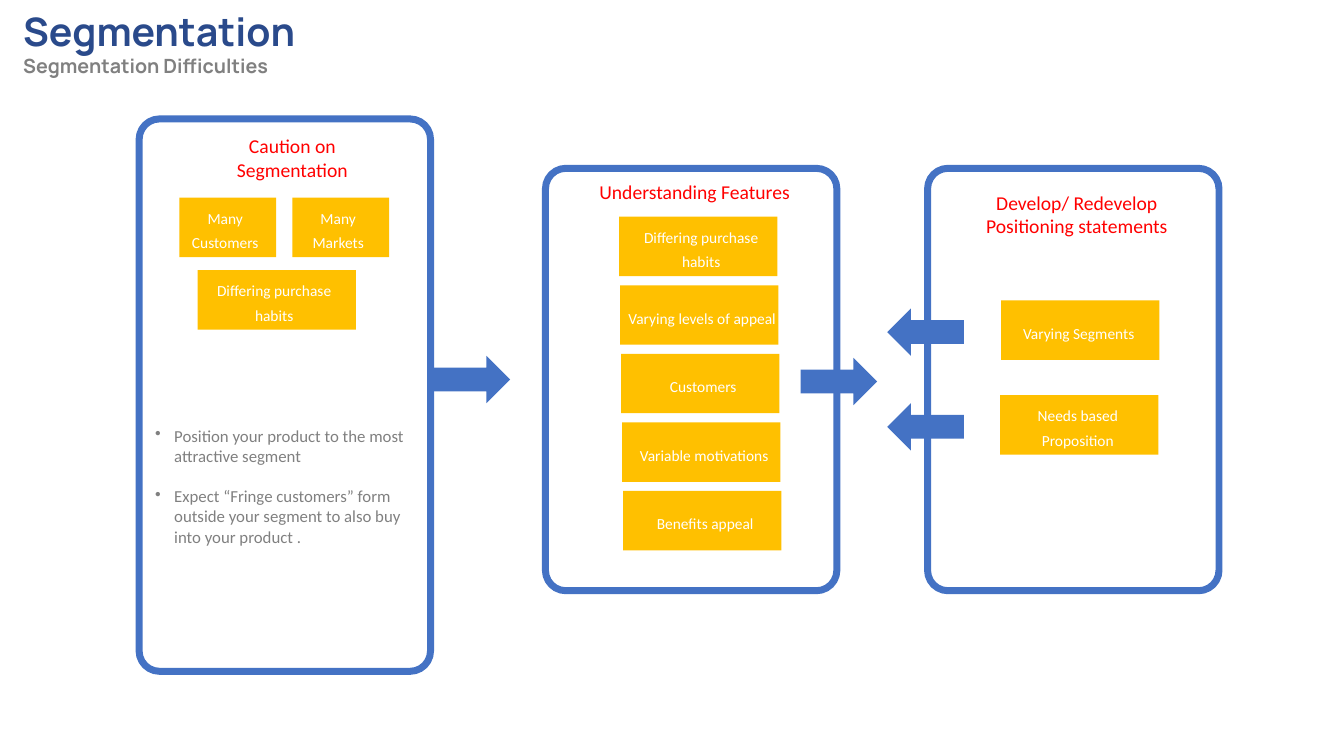
from lxml import etree
from pptx import Presentation
from pptx.dml.color import RGBColor
from pptx.enum.shapes import MSO_SHAPE
from pptx.enum.text import MSO_ANCHOR, MSO_AUTO_SIZE, PP_ALIGN
from pptx.oxml.ns import qn
from pptx.util import Inches, Pt

RECT, ROUND = MSO_SHAPE.RECTANGLE, MSO_SHAPE.ROUNDED_RECTANGLE
RIGHT, LEFT = MSO_SHAPE.RIGHT_ARROW, MSO_SHAPE.LEFT_ARROW
TOP, MIDDLE = MSO_ANCHOR.TOP, MSO_ANCHOR.MIDDLE
ALIGN_LEFT, ALIGN_CENTER = PP_ALIGN.LEFT, PP_ALIGN.CENTER
WHITE = RGBColor(0xFF, 0xFF, 0xFF)
BLUE = RGBColor(0x44, 0x72, 0xC4)
NAVY = RGBColor(0x2A, 0x4A, 0x8B)
GREY = RGBColor(0x80, 0x80, 0x80)
RED = RGBColor(0xFF, 0, 0)
AMBER = RGBColor(0xFF, 0xC0, 0)

TITLE, SUBTITLE = "Segmentation", "Segmentation Difficulties"
ADVICE = [
    "Position your product to the most attractive segment",
    "Expect “Fringe customers” form outside your segment to also buy into your product .",
]
FEATURES = ["Differing purchase habits", "Varying levels of appeal", "Customers",
            "Variable motivations", "Benefits appeal"]

PANEL_W, BOX_W, SMALL_W, BOX_H = 2.89, 1.57, 0.96, 0.59
ARROW_W, ARROW_H, HEADING_W = 0.76, 0.47, 2.18
FEATURE_PITCH, FEATURE_STEP = 0.68, 0.01

# Panel: position, height, heading with its position, label margins, boxes (text, x, y, width)
PANELS = [
    dict(at=(1.38, 1.18), height=5.48, heading="Caution on\vSegmentation",
         heading_at=(1.81, 1.28), margins=(0.03, 0.08), advice=ADVICE,
         boxes=[("Many Customers", 1.78, 1.96, SMALL_W),
                ("Many Markets", 2.9, 1.96, SMALL_W),
                ("Differing purchase habits", 1.96, 2.68, BOX_W)]),
    dict(at=(5.41, 1.67), height=4.19, heading="Understanding Features",
         heading_at=(5.8, 1.74), margins=(0.06, 0), advice=[],
         boxes=[(text, 6.14 + i * FEATURE_STEP, 2.15 + i * FEATURE_PITCH, BOX_W)
                for i, text in enumerate(FEATURES)]),
    dict(at=(9.2, 1.67), height=4.19, heading="Develop/ Redevelop\vPositioning statements",
         heading_at=(9.59, 1.84), margins=(0.03, 0.06), advice=[],
         boxes=[("Varying Segments", 9.93, 2.98, BOX_W),
                ("Needs based Proposition", 9.92, 3.92, BOX_W)]),
]
ARROWS = [(RIGHT, 4.3, 3.53), (RIGHT, 7.94, 3.55), (LEFT, 8.8, 3.06), (LEFT, 8.8, 4)]


def add_box(kind, x, y, w, h, fill, line=None):
    sp = s.shapes.add_shape(kind, Inches(x), Inches(y), Inches(w), Inches(h))
    sp.shadow.inherit = False
    sp.fill.solid()
    sp.fill.fore_color.rgb = fill
    if line is None:
        sp.line.fill.background()
    else:
        sp.line.color.rgb = line
        sp.line.width = Pt(5)
    return sp


def set_frame(tf, anchor=TOP, left=0.1, top=0.05, right=0.1, bottom=0.05):
    tf.word_wrap = True
    tf.auto_size = MSO_AUTO_SIZE.NONE
    tf.vertical_anchor = anchor
    tf.margin_left, tf.margin_right = Inches(left), Inches(right)
    tf.margin_top, tf.margin_bottom = Inches(top), Inches(bottom)


def write(p, text, size, color, font="Calibri", bold=False, align=ALIGN_CENTER,
          spacing=None, before=0, after=0):
    p.text = text
    p.alignment = align
    p.line_spacing = spacing
    p.space_before, p.space_after = Pt(before), Pt(after)
    for r in p.runs:
        r.font.name, r.font.size, r.font.bold = font, Pt(size), bold
        r.font.color.rgb = color


def add_bullet(p, indent=0.19):
    pPr = p._p.get_or_add_pPr()
    pPr.set("marL", str(Inches(indent)))
    pPr.set("indent", str(-Inches(indent)))
    etree.SubElement(pPr, qn("a:buChar")).set("char", "•")


def add_panel(at, height, heading, heading_at, margins, advice, boxes):
    panel = add_box(ROUND, *at, PANEL_W, height, WHITE, BLUE)
    panel.adjustments[0] = 0.07
    if advice:
        tf = panel.text_frame
        set_frame(tf, top=2.98)
        for i, text in enumerate(advice):
            p = tf.add_paragraph() if i else tf.paragraphs[0]
            write(p, text, 12, GREY, align=ALIGN_LEFT, before=14.6 if i else 0)
            add_bullet(p)

    x, y = heading_at
    tf = s.shapes.add_textbox(Inches(x), Inches(y), Inches(HEADING_W), Inches(0.57)).text_frame
    set_frame(tf)
    write(tf.paragraphs[0], heading, 14, RED)

    left, right = margins
    for text, x, y, w in boxes:
        tf = add_box(RECT, x, y, w, BOX_H, AMBER).text_frame
        set_frame(tf, MIDDLE, left, 0.03, right, 0.03)
        write(tf.paragraphs[0], text, 11, WHITE, spacing=Pt(17.5), after=9)


prs = Presentation()
prs.slide_width, prs.slide_height = Inches(13.33), Inches(7.5)
s = prs.slides.add_slide(prs.slide_layouts[5])

title = s.shapes.title
title.left, title.top = Inches(0.13), Inches(0.02)
title.width, title.height = Inches(10.53), Inches(1.04)
tf = title.text_frame
set_frame(tf)
write(tf.paragraphs[0], TITLE, 28, NAVY, "Manrope", True, ALIGN_LEFT)
write(tf.add_paragraph(), SUBTITLE, 14, GREY, "Manrope", True, ALIGN_LEFT)

for panel in PANELS:
    add_panel(**panel)
for kind, x, y in ARROWS:
    add_box(kind, x, y, ARROW_W, ARROW_H, BLUE)

prs.save("out.pptx")
